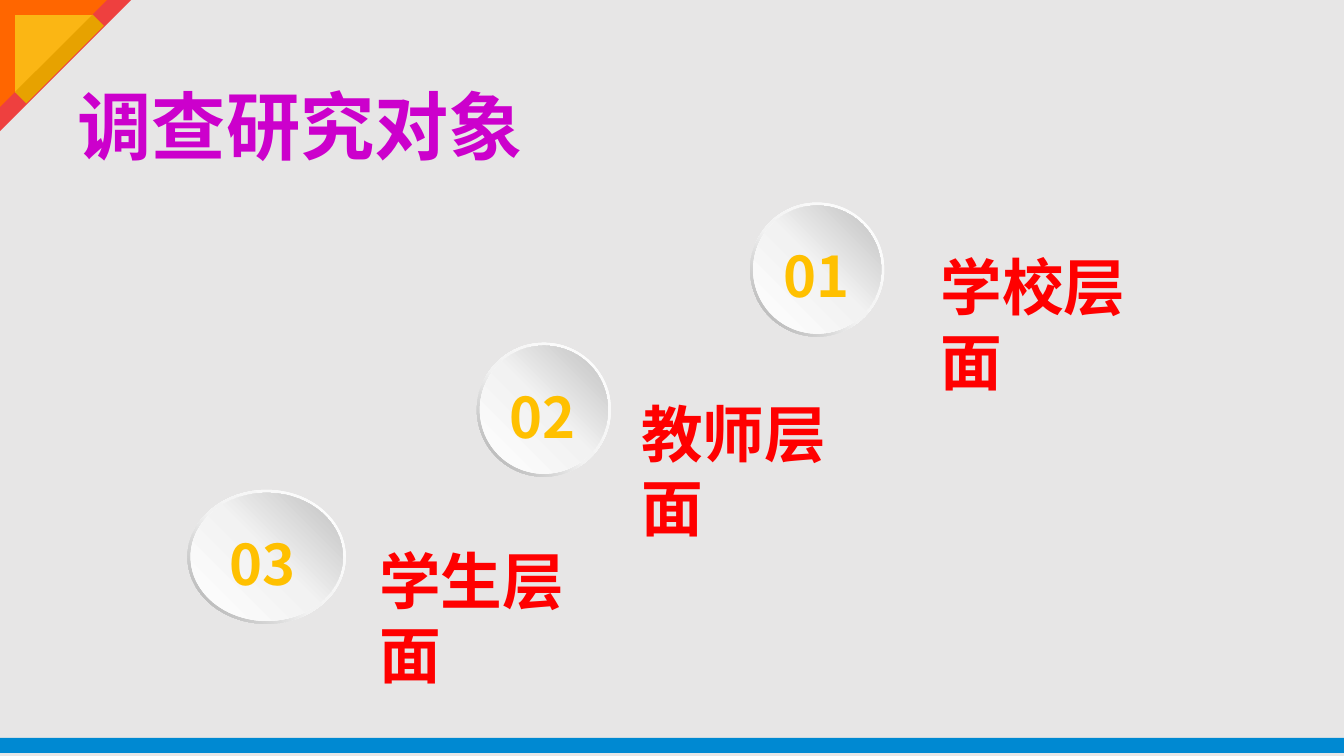
from copy import deepcopy

from pptx import Presentation
from pptx.dml.color import RGBColor
from pptx.enum import shapes, text
from pptx.oxml import ns
from pptx.util import Inches, Pt

FONT = "Noto Sans CJK SC"
RING_STOPS = [(0, "FFFFFF"), (0.55, "F2F2F2"), (1, "A6A6A6")]
DISC_STOPS = [(0, "FFFFFF"), (0.51, "F2F2F2"), (1, "BFBFBF")]
RIM = 0.03

# number, label, ring (left, top, width), number left, label (left, top)
LEVELS = [
    ("01", "学校层面", (7.44, 2.01, 1.33), 7.67, (9.19, 2.34)),
    ("02", "教师层面", (4.73, 3.40, 1.33), 4.96, (6.22, 3.79)),
    ("03", "学生层面", (1.86, 4.86, 1.57), 2.18, (3.62, 5.25)),
]
# offset, size and colour of each corner triangle
CORNER = [(0, 1.3, "EE403F"), (0, 1.06, "FF6600"), (0.15, 0.77, "FBB614")]


def rgb(value):
    return RGBColor.from_string(value)


class SlideBuilder:
    def __init__(self, prs, background):
        self.s = prs.slides.add_slide(prs.slide_layouts[5])
        self.s.background.fill.solid()
        self.s.background.fill.fore_color.rgb = rgb(background)

    def shape(self, kind, box, color=None, rotation=0, parent=None):
        parent = parent or self.s.shapes
        sp = parent.add_shape(kind, *map(Inches, box))
        sp.shadow.inherit = False
        sp.line.fill.background()
        sp.rotation = rotation
        if color:
            sp.fill.solid()
            sp.fill.fore_color.rgb = rgb(color)
        return sp

    def gradient(self, sp, stops, angle):
        """Fill sp with three stops; angle runs counter-clockwise."""
        sp.fill.gradient()
        sp.fill.gradient_angle = angle
        first = sp._element.spPr.find(".//" + ns.qn("a:gs"))
        first.addnext(deepcopy(first))
        for stop, (position, color) in zip(sp.fill.gradient_stops, stops):
            stop.position = position
            stop.color.rgb = rgb(color)

    def set_text(self, sp, words, size, color, side=0.1, top=0.05):
        """Put bold text, its lines 1.2 times its size apart, into sp."""
        tf = sp.text_frame
        frame = {
            "word_wrap": True,
            "auto_size": text.MSO_AUTO_SIZE.NONE,
            "vertical_anchor": text.MSO_ANCHOR.TOP,
            "margin_left": Inches(side),
            "margin_right": Inches(side),
            "margin_top": Inches(top),
            "margin_bottom": Inches(0.05),
        }
        for name, value in frame.items():
            setattr(tf, name, value)
        p = tf.paragraphs[0]
        p.alignment = text.PP_ALIGN.LEFT
        p.line_spacing = Pt(round(size * 1.2))
        r = p.add_run()
        r.text = words
        for name, value in {"name": FONT, "size": Pt(size), "bold": True}.items():
            setattr(r.font, name, value)
        r.font.color.rgb = rgb(color)
        latin = r._r.rPr.find(ns.qn("a:latin"))
        latin.addnext(latin.makeelement(ns.qn("a:ea"), {"typeface": FONT}))

    def title(self, box, words, size, color):
        sp = self.s.shapes.title
        sp.left, sp.top, sp.width, sp.height = map(Inches, box)
        self.set_text(sp, words, size, color, top=0.12)

    def level(self, number, label, ring_box, number_left, label_at):
        """Group a ringed number with its label."""
        left, top, width = ring_box
        height = 1.33
        group = self.s.shapes.add_group_shape().shapes

        sp = group.add_textbox(*map(Inches, (*label_at, 2.71, 0.87)))
        self.set_text(sp, label, 44, "FF0000", side=0.14, top=0.13)

        ring = self.shape(shapes.MSO_SHAPE.DONUT, (left, top, width, height), parent=group)
        ring.adjustments[0] = 0.05
        self.gradient(ring, RING_STOPS, 225)

        disc_box = (left + RIM, top + RIM, width - 2 * RIM, height - 2 * RIM)
        disc = self.shape(shapes.MSO_SHAPE.OVAL, disc_box, parent=group)
        self.gradient(disc, DISC_STOPS, 45)

        sp = group.add_textbox(*map(Inches, (number_left, top + 0.29, 0.9, 0.77)))
        self.set_text(sp, number, 40, "FFC000", top=0.1)


def main():
    prs = Presentation()
    prs.slide_width, prs.slide_height = Inches(13.33), Inches(7.5)
    slide = SlideBuilder(prs, "E7E6E6")

    for level in LEVELS:
        slide.level(*level)

    slide.shape(shapes.MSO_SHAPE.RECTANGLE, (0, 7.32, 13.33, 0.15), "0089D2")
    for at, size, color in CORNER:
        slide.shape(shapes.MSO_SHAPE.RIGHT_TRIANGLE, (at, at, size, size), color, 90)
    slide.shape(shapes.MSO_SHAPE.RECTANGLE, (0.51, 0.04, 0.16, 1.09), "E7A200", 45)

    slide.title((0.67, 0.67, 7.35, 0.99), "调查研究对象", 53, "CC00CC")
    prs.save("out.pptx")


if __name__ == "__main__":
    main()
